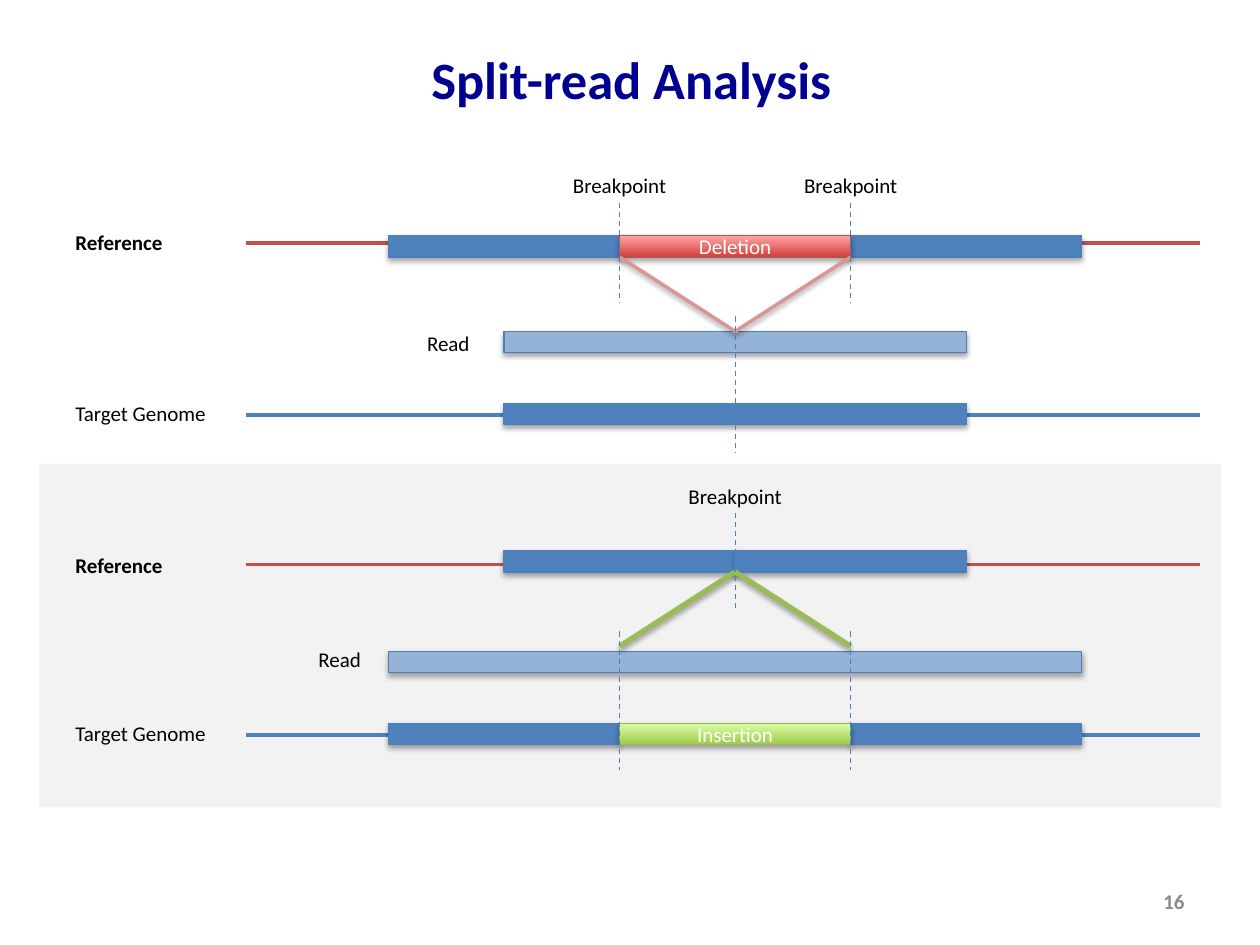
from dataclasses import dataclass
from lxml.etree import SubElement
from pptx import Presentation
from pptx.dml.color import RGBColor
from pptx.enum.dml import MSO_LINE
from pptx.enum.shapes import MSO_CONNECTOR, MSO_SHAPE
from pptx.enum.text import MSO_ANCHOR, MSO_AUTO_SIZE, PP_ALIGN
from pptx.oxml.ns import qn
from pptx.util import Cm, Pt


@dataclass(frozen=True)
class Theme:
    font: str = "Calibri"
    head: int = 30
    body: int = 12
    navy: str = "000090"
    black: str = "000000"
    white: str = "FFFFFF"
    gray: str = "8C8C8C"
    panel: str = "F2F2F2"
    blue: str = "4F81BD"
    edge: str = "4B7EBC"
    pale: str = "95B3D7"
    red: str = "C0504D"
    pink: str = "D99694"
    green: str = "9BBB59"
    loss: tuple = ("D1403C", "FFA6A5", "BF4C48")
    gain: tuple = ("A0CA4A", "DAFFA5", "98B955")


THEME = Theme()
MID, STEP, THICK = 14.03, 2.33, 0.43
START, END = 4.16, 23.41

LOSS = dict(
    back=None, tag="Deletion", tint=THEME.loss,
    cut="ref", sides=(-1, 1), whole=2, read=2,
    ref=(1.4, 1.55), target=(4.78, 5.01), row=3.33,
    marks=0, upper=(0.74, 2.75), lower=(3.03, 5.79),
    names=(1.15, 3.18, 4.6), indent=7.57,
    fold=(1.83, 3.33), outer=0, ink=THEME.pink, weight=2)
GAIN = dict(
    back=THEME.panel, tag="Insertion", tint=THEME.gain,
    cut="target", sides=(0,), whole=2, read=3,
    ref=(1.75, 2.03), target=(5.23, 5.46), row=3.78,
    marks=0.28, upper=(0.99, 2.97), lower=(3.38, 6.17),
    names=(1.67, 3.55, 5.05), indent=5.38,
    fold=(2.18, 3.68), outer=1, ink=THEME.green, weight=3)


def color(code):
    return RGBColor.from_string(code)


def write(frame, text, ink, size=THEME.body, bold=False, align=PP_ALIGN.LEFT):
    para = frame.paragraphs[0]
    para.alignment = align
    run = para.add_run()
    run.text = text
    run.font.name = THEME.font
    run.font.size = Pt(size)
    run.font.bold = bold
    run.font.color.rgb = color(ink)


def shade(effects):
    shadow = SubElement(effects, qn("a:outerShdw"), blurRad="39370",
                        dist="22860", dir="5400000", rotWithShape="0")
    tone = SubElement(shadow, qn("a:srgbClr"), val=THEME.black)
    SubElement(tone, qn("a:alpha"), val="35000")


def stroke(slide, start, end, ink, weight, dash=False, shadow=False):
    line = slide.shapes.add_connector(
        MSO_CONNECTOR.STRAIGHT, *map(Cm, (*start, *end)))
    line.line.color.rgb = color(ink)
    line.line.width = Pt(weight)
    if dash:
        line.line.dash_style = MSO_LINE.DASH
    effects = SubElement(line.element.find(qn("p:spPr")), qn("a:effectLst"))
    if shadow:
        shade(effects)


def block(slide, box, fill, edge=None):
    shape = slide.shapes.add_shape(MSO_SHAPE.RECTANGLE, *map(Cm, box))
    shape.shadow.inherit = False
    if isinstance(fill, tuple):
        shape.fill.gradient()
        shape.fill.gradient_angle = 90
        for stop, code, place in zip(shape.fill.gradient_stops, fill, (0, 1)):
            stop.color.rgb = color(code)
            stop.position = place
    else:
        shape.fill.solid()
        shape.fill.fore_color.rgb = color(fill)
    if edge:
        shape.line.color.rgb = color(edge)
        shape.line.width = Pt(0.75)
        shade(shape.element.find(qn("p:spPr")).find(qn("a:effectLst")))
    else:
        shape.line.fill.background()
    return shape


def label(slide, text, left, top, width, bold=False, align=PP_ALIGN.LEFT):
    frame = slide.shapes.add_textbox(
        Cm(left), Cm(top), Cm(width), Cm(0.77)).text_frame
    frame.word_wrap = False
    frame.auto_size = MSO_AUTO_SIZE.SHAPE_TO_FIT_TEXT
    write(frame, text, THEME.black, bold=bold, align=align)


def panel(slide, box, plan):
    left, top = box[:2]

    def col(step):
        return left + MID + step * STEP

    def bar(first, last, row, fill=THEME.blue, edge=THEME.edge):
        area = (col(first), top + row, (last - first) * STEP, THICK)
        return block(slide, area, fill, edge)

    if plan["back"]:
        block(slide, box, plan["back"])
    for name, ink in (("ref", THEME.red), ("target", THEME.blue)):
        row, axis = plan[name]
        stroke(slide, (left + START, top + axis),
               (left + END, top + axis), ink, 2.25)
        if name == plan["cut"]:
            bar(-3, -1, row)
            bar(1, 3, row)
            low, high, edge = plan["tint"]
            frame = bar(-1, 1, row, (low, high), edge).text_frame
            frame.margin_top = frame.margin_bottom = 0
            frame.vertical_anchor = MSO_ANCHOR.MIDDLE
            write(frame, plan["tag"], THEME.white, align=PP_ALIGN.CENTER)
        elif name == "ref":
            bar(-2, 0, row)
            bar(0, 2, row)
        else:
            bar(-plan["whole"], plan["whole"], row)
    bar(-plan["read"], plan["read"], plan["row"], THEME.pale)

    high, low = plan["fold"]
    for side in (-1, 1):
        ends = [(col(side), top + high), (col(0), top + low)]
        if plan["outer"]:
            ends = [(col(0), top + high), (col(side), top + low)]
        stroke(slide, *ends, plan["ink"], plan["weight"], shadow=True)

    others = (0,) if len(plan["sides"]) == 2 else (-1, 1)
    for sides, span in ((plan["sides"], "upper"), (others, "lower")):
        first, last = plan[span]
        for side in sides:
            stroke(slide, (col(side), top + first), (col(side), top + last),
                   THEME.edge, 0.75, dash=True)
    for side in plan["sides"]:
        label(slide, "Breakpoint", col(side) - 1.2, top + plan["marks"],
              2.4, align=PP_ALIGN.CENTER)
    ref, read, target = plan["names"]
    label(slide, "Reference", left + 0.48, top + ref, 2.29, bold=True)
    label(slide, "Read", left + plan["indent"], top + read, 1.37)
    label(slide, "Target Genome", left + 0.48, top + target, 3.18)


def title(slide, box, text):
    shape = slide.shapes.title
    shape.left, shape.top, shape.width, shape.height = map(Cm, box)
    shape.text_frame.vertical_anchor = MSO_ANCHOR.MIDDLE
    write(shape.text_frame, text, THEME.navy, THEME.head, True,
          PP_ALIGN.CENTER)


def number(slide, box, text):
    frame = slide.shapes.add_textbox(*map(Cm, box)).text_frame
    frame.word_wrap = True
    frame.vertical_anchor = MSO_ANCHOR.MIDDLE
    write(frame, text, THEME.gray, bold=True, align=PP_ALIGN.RIGHT)


def main():
    deck = Presentation()
    deck.slide_width, deck.slide_height = Cm(25.4), Cm(19.05)
    slide = deck.slides.add_slide(deck.slide_layouts[5])
    title(slide, (1.3, 0, 22.86, 3.18), "Split-read Analysis")
    panel(slide, (0.79, 3.35, 23.83, 5.9), LOSS)
    panel(slide, (0.79, 9.35, 23.83, 6.93), GAIN)
    number(slide, (18.2, 17.66, 5.93, 1.01), "16")
    deck.save("out.pptx")


if __name__ == "__main__":
    main()
